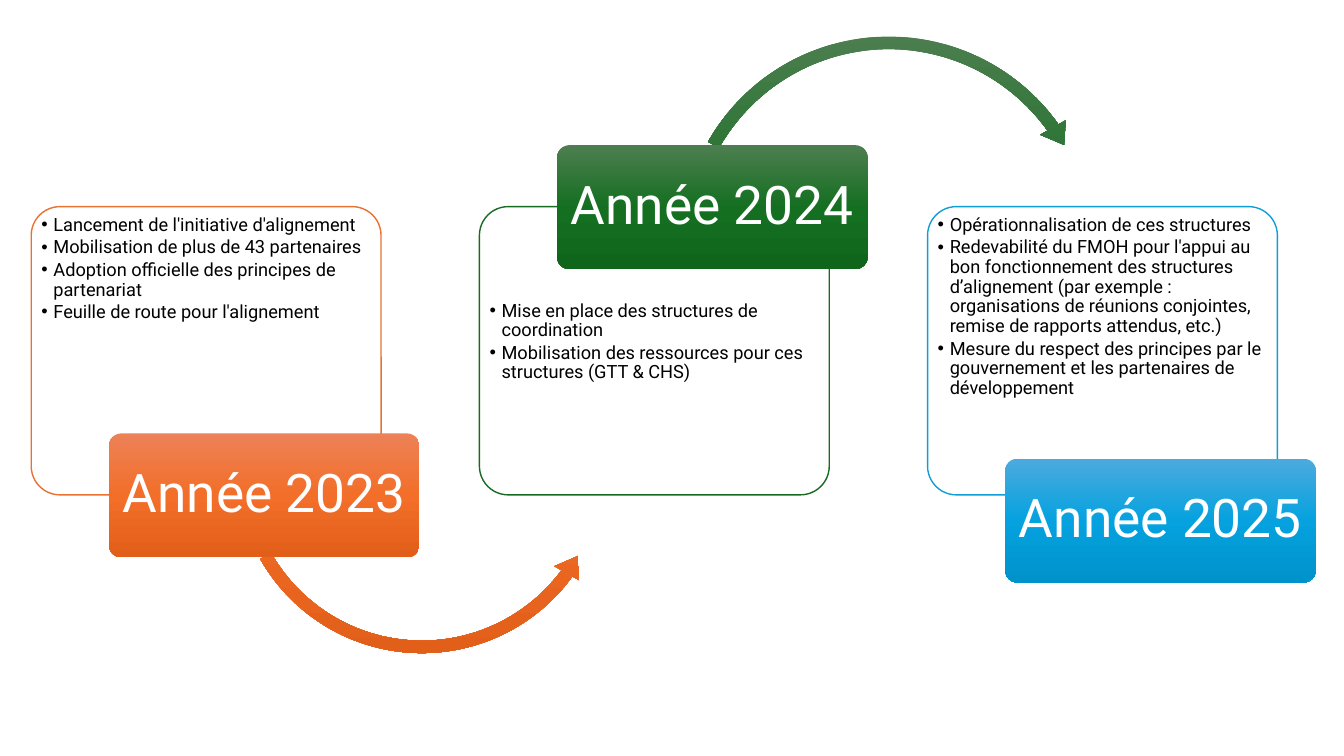
import copy
from dataclasses import dataclass

import pptx
import pptx.dml.color
import pptx.enum.shapes
import pptx.enum.text
import pptx.oxml
import pptx.oxml.ns
import pptx.util
from pptx.dml.color import RGBColor
from pptx.enum.shapes import MSO_SHAPE
from pptx.util import Inches

WHITE = RGBColor(0xFF, 0xFF, 0xFF)
BLACK = RGBColor(0x00, 0x00, 0x00)
ORANGE = RGBColor(0xE9, 0x71, 0x32)
GREEN = RGBColor(0x19, 0x6B, 0x24)
BLUE = RGBColor(0x0F, 0x9E, 0xD5)
ORANGE_SHADES = (RGBColor(0xED, 0x82, 0x57), RGBColor(0xF2, 0x6E, 0x29), RGBColor(0xE2, 0x5F, 0x1A))
GREEN_SHADES = (RGBColor(0x4D, 0x7E, 0x50), RGBColor(0x15, 0x6F, 0x21), RGBColor(0x0F, 0x66, 0x1B))
BLUE_SHADES = (RGBColor(0x4C, 0xAA, 0xDF), RGBColor(0x05, 0xA2, 0xDF), RGBColor(0x00, 0x92, 0xCB))

FONT = "Roboto"
COMPARISON_LAYOUT = 4
FIRST_LEFT, COLUMN_STEP = 0.31, 4.445
PANEL_TOP, PANEL_W, PANEL_H = 2.05, 3.47, 2.86
LABEL_SHIFT, LABEL_W, LABEL_H = 0.77, 3.08, 1.23


@dataclass
class Arrow:
    shape: MSO_SHAPE
    left: float
    top: float
    size: float
    adjustments: tuple[float, ...]


@dataclass
class Year:
    label: str
    label_top: float
    list_top: float
    placeholder: int
    outline: RGBColor
    shades: tuple[RGBColor, ...]
    bullets: list[str]
    arrow: Arrow | None = None


YEARS = [
    Year("Année 2023", 4.3, 2.11, 1, ORANGE, ORANGE_SHADES,
         ["Lancement de l'initiative d'alignement",
          "Mobilisation de plus de 43 partenaires",
          "Adoption officielle des principes de partenariat",
          "Feuille de route pour l'alignement"],
         Arrow(MSO_SHAPE.LEFT_CIRCULAR_ARROW, 2.26, 2.71, 3.85,
               (0.032, 3.959, 21.714, 90.245, 0.037))),
    Year("Année 2024", 1.44, 2.96, 2, GREEN, GREEN_SHADES,
         ["Mise en place des structures de coordination",
          "Mobilisation des ressources pour ces structures (GTT & CHS)"],
         Arrow(MSO_SHAPE.CIRCULAR_ARROW, 6.67, 0.28, 4.29,
               (0.029, 3.522, 194.723, 125.755, 0.034))),
    Year("Année 2025", 4.55, 2.11, 4, BLUE, BLUE_SHADES,
         ["Opérationnalisation de ces structures",
          "Redevabilité du FMOH pour l'appui au bon fonctionnement des structures "
          "d’alignement (par exemple : organisations de réunions conjointes, "
          "remise de rapports attendus, etc.)",
          "Mesure du respect des principes par le gouvernement et les partenaires "
          "de développement"]),
]


def add_plain_shape(s, kind: MSO_SHAPE, left: float, top: float, width: float, height: float):
    sp = s.shapes.add_shape(kind, Inches(left), Inches(top), Inches(width), Inches(height))
    sp.shadow.inherit = False
    sp.line.fill.background()
    return sp


def fill_gradient(sp, shades: tuple[RGBColor, ...]) -> None:
    """Fill from top to bottom with evenly spaced shades."""
    sp.fill.gradient()
    sp.fill.gradient_angle = 270
    stops = sp._element.spPr.find(".//" + pptx.oxml.ns.qn("a:gsLst"))
    while len(stops) < len(shades):
        stops.append(copy.deepcopy(stops[0]))
    for i, (stop, shade) in enumerate(zip(sp.fill.gradient_stops, shades)):
        stop.position = i / (len(shades) - 1)
        stop.color.rgb = shade


def add_run(p, text: str, size: float, color: RGBColor) -> None:
    p.line_spacing = 0.9
    r = p.add_run()
    r.text = text
    r.font.name = FONT
    r.font.size = pptx.util.Pt(size)
    r.font.bold = False
    r.font.color.rgb = color


def add_bullet_mark(p) -> None:
    pPr = p._p.get_or_add_pPr()
    pPr.set("marL", str(Inches(0.12)))
    pPr.set("indent", str(Inches(-0.12)))
    pPr.append(pptx.oxml.parse_xml(f'<a:buChar {pptx.oxml.ns.nsdecls("a")} char="•"/>'))


def add_panel(s, year: Year, left: float) -> None:
    sp = add_plain_shape(s, MSO_SHAPE.ROUNDED_RECTANGLE, left, PANEL_TOP, PANEL_W, PANEL_H)
    sp.adjustments[0] = 0.1
    sp.fill.solid()
    sp.fill.fore_color.rgb = WHITE
    sp.line.color.rgb = year.outline
    sp.line.width = pptx.util.Pt(1)


def place_list(s, year: Year, left: float) -> None:
    """Lay the year's bullets in a body placeholder above its panel."""
    body = s.placeholders[year.placeholder]
    body.left, body.top = Inches(left + 0.07), Inches(year.list_top)
    body.width, body.height = Inches(3.34), Inches(1.89)
    s.shapes._spTree.append(body._element)
    tf = body.text_frame
    tf.word_wrap = True
    tf.auto_size = pptx.enum.text.MSO_AUTO_SIZE.NONE
    tf.vertical_anchor = pptx.enum.text.MSO_ANCHOR.TOP
    tf.margin_left = tf.margin_right = tf.margin_top = tf.margin_bottom = Inches(0.03)
    for i, bullet in enumerate(year.bullets):
        p = tf.add_paragraph() if i else tf.paragraphs[0]
        p.space_before = pptx.util.Pt(0)
        p.space_after = pptx.util.Pt(2)
        add_run(p, bullet, 13, BLACK)
        add_bullet_mark(p)


def add_arrow(s, arrow: Arrow, shades: tuple[RGBColor, ...]) -> None:
    sp = add_plain_shape(s, arrow.shape, arrow.left, arrow.top, arrow.size, arrow.size)
    for i, value in enumerate(arrow.adjustments):
        sp.adjustments[i] = value
    fill_gradient(sp, shades)


def add_label(s, year: Year, left: float) -> None:
    sp = add_plain_shape(s, MSO_SHAPE.ROUNDED_RECTANGLE, left + LABEL_SHIFT, year.label_top,
                         LABEL_W, LABEL_H)
    sp.adjustments[0] = 0.1
    fill_gradient(sp, year.shades)
    tf = sp.text_frame
    tf.margin_left = tf.margin_right = Inches(0.05)
    tf.vertical_anchor = pptx.enum.text.MSO_ANCHOR.MIDDLE
    p = tf.paragraphs[0]
    p.alignment = pptx.enum.text.PP_ALIGN.CENTER
    add_run(p, year.label, 38, WHITE)


def main() -> None:
    prs = pptx.Presentation()
    prs.slide_width, prs.slide_height = Inches(13.33), Inches(7.5)
    s = prs.slides.add_slide(prs.slide_layouts[COMPARISON_LAYOUT])
    used = {year.placeholder for year in YEARS}
    for ph in list(s.placeholders):
        if ph.placeholder_format.idx not in used:
            ph._element.getparent().remove(ph._element)
    for i, year in enumerate(YEARS):
        left = FIRST_LEFT + i * COLUMN_STEP
        add_panel(s, year, left)
        place_list(s, year, left)
        if year.arrow:
            add_arrow(s, year.arrow, year.shades)
        add_label(s, year, left)
    prs.save("out.pptx")


if __name__ == "__main__":
    main()
